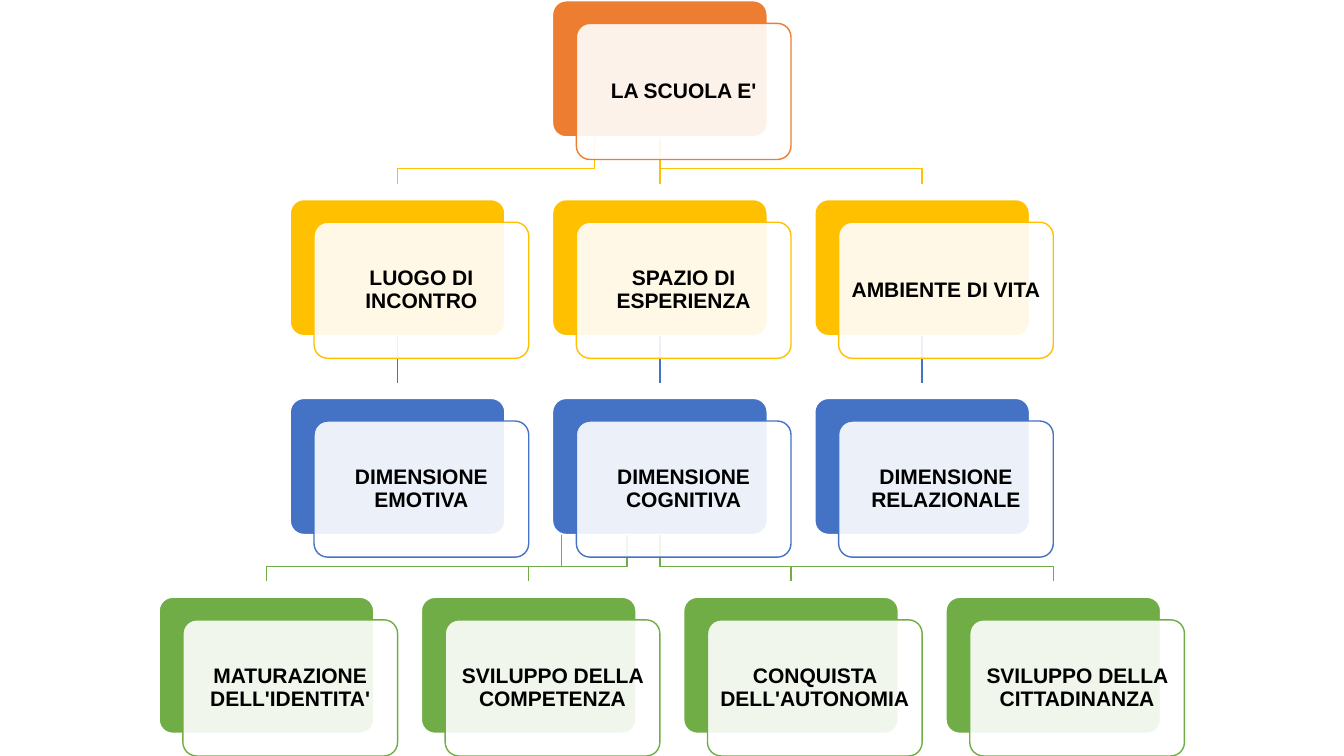
from lxml import etree
from pptx import Presentation, util as u
from pptx.dml.color import RGBColor
from pptx.enum import shapes, text
from pptx.oxml.ns import qn

FONT = "Arial"
CARD_W, CARD_H = 5.41, 3.43
FRONT_DX, FRONT_DY = 0.6, 0.57      # shift of the front card
COL, ROW = 6.61, 5.01               # pitch of the grid
MID, TOP = 16.63, 0.02              # middle axis and first row
ELBOW, DROP = 0.8, 1.18             # below the bottom of the parent

# Each level: colour, and its boxes as (columns from the axis, label)
LEVELS = [
    ("ED7D31", [(0, "LA SCUOLA E'")]),
    ("FFC000", [(-1, "LUOGO DI INCONTRO"), (0, "SPAZIO DI ESPERIENZA"),
                (1, "AMBIENTE DI VITA")]),
    ("4472C4", [(-1, "DIMENSIONE EMOTIVA"), (0, "DIMENSIONE COGNITIVA"),
                (1, "DIMENSIONE RELAZIONALE")]),
    ("70AD47", [(-1.5, "MATURAZIONE DELL'IDENTITA'"),
                (-0.5, "SVILUPPO DELLA COMPETENZA"),
                (0.5, "CONQUISTA DELL'AUTONOMIA"),
                (1.5, "SVILUPPO DELLA CITTADINANZA")]),
]
# Branches: level of the child, column of the parent, column of the child
BRANCHES = ([(1, 0, c) for c in (-1, 0, 1)]
            + [(2, c, c) for c in (-1, 0, 1)]
            + [(3, 0, c) for c in (-1.5, -0.5, 0.5, 1.5)])


def rgb(value):
    return RGBColor.from_string(value)


def add_card(s, x, y, fill, line):
    sp = s.shapes.add_shape(shapes.MSO_SHAPE.ROUNDED_RECTANGLE, u.Cm(x), u.Cm(y),
                            u.Cm(CARD_W), u.Cm(CARD_H))
    sp.adjustments[0] = 0.1
    sp.shadow.inherit = False
    sp.fill.solid()
    sp.fill.fore_color.rgb = rgb(fill)
    sp.line.color.rgb = rgb(line)
    sp.line.width = u.Pt(1)
    return sp


def add_box(s, x, y, color, label):
    # Coloured back card and translucent front card
    add_card(s, x, y, color, "FFFFFF")
    front = add_card(s, x + FRONT_DX, y + FRONT_DY, "FFFFFF", color)
    fill = front.fill._xPr.find(qn("a:solidFill"))
    etree.SubElement(fill[0], qn("a:alpha"), val="90000")

    # Label
    tf = front.text_frame
    tf.word_wrap = True
    tf.vertical_anchor = text.MSO_ANCHOR.MIDDLE
    tf.margin_left = tf.margin_right = u.Cm(0.15)
    tf.margin_top = tf.margin_bottom = u.Cm(0.15)
    p = tf.paragraphs[0]
    p.alignment = text.PP_ALIGN.CENTER
    p.line_spacing = 0.9
    r = p.add_run()
    r.text = label
    r.font.name, r.font.size, r.font.bold = FONT, u.Pt(15), True
    r.font.color.rgb = rgb("000000")


def add_branch(s, x1, x2, y, color):
    if x1 == x2:
        sp = s.shapes.add_connector(shapes.MSO_CONNECTOR.STRAIGHT, u.Cm(x1), u.Cm(y),
                                    u.Cm(x2), u.Cm(y + DROP))
        etree.SubElement(sp._element.spPr, qn("a:effectLst"))
    else:
        # Branches to the left leave a quarter of the way along
        start = x1 + (x2 - x1) / 4 if x2 < x1 else x1
        pts = [(start, y + ELBOW), (x2, y + ELBOW), (x2, y + DROP)]
        path = s.shapes.build_freeform(u.Cm(start), u.Cm(y))
        path.add_line_segments([(u.Cm(a), u.Cm(b)) for a, b in pts], close=False)
        sp = path.convert_to_shape()
        sp.fill.background()
        sp.shadow.inherit = False
    sp.line.color.rgb = rgb(color)
    sp.line.width = u.Pt(1)


def add_tree(s, mid, top):
    # Branches behind the boxes
    for level, parent, child in BRANCHES:
        bottom = top + (level - 1) * ROW + CARD_H
        add_branch(s, mid + parent * COL, mid + child * COL, bottom, LEVELS[level][0])

    # Boxes, level by level
    for level, (color, boxes) in enumerate(LEVELS):
        for col, label in boxes:
            add_box(s, mid + col * COL - CARD_W / 2, top + level * ROW, color, label)


def main():
    prs = Presentation()
    prs.slide_width, prs.slide_height = u.Cm(33.87), u.Cm(19.05)
    s = prs.slides.add_slide(prs.slide_layouts[6])
    add_tree(s, MID, TOP)
    prs.save("out.pptx")


if __name__ == "__main__":
    main()
